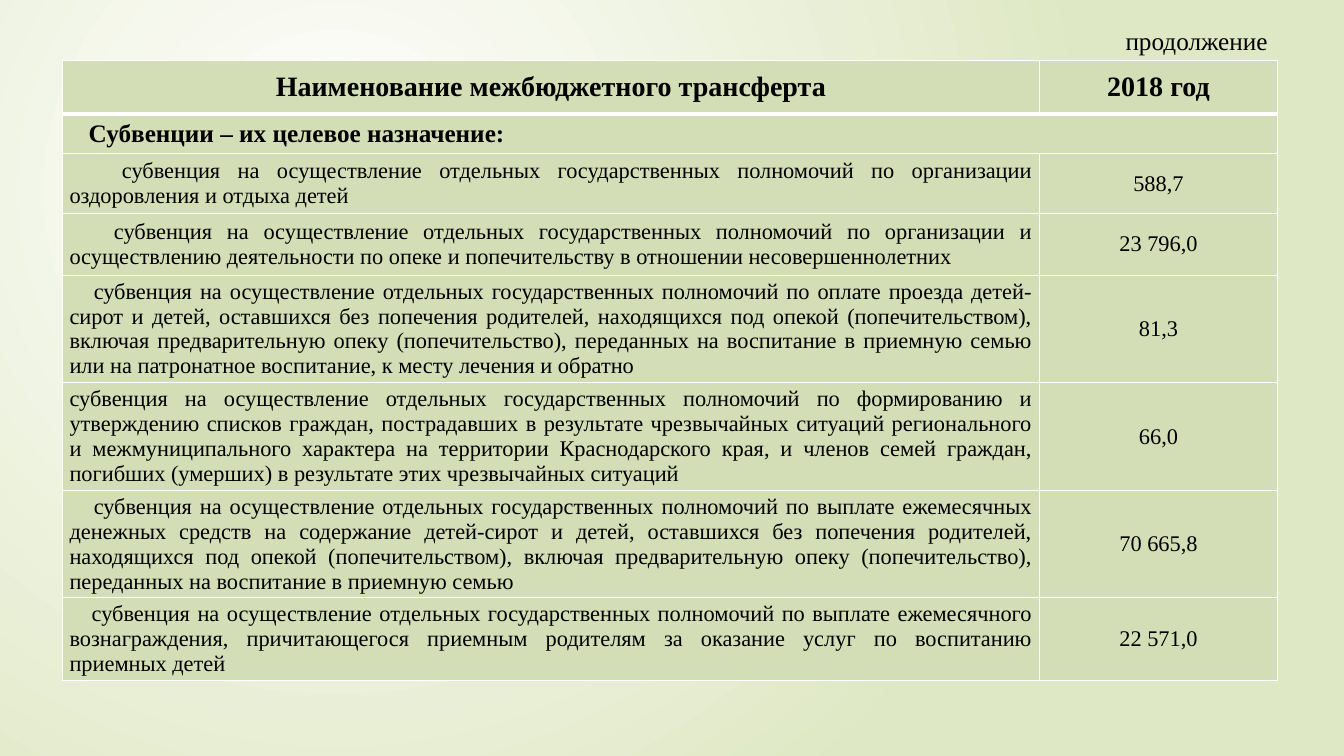
from dataclasses import dataclass

from lxml import etree
from pptx import Presentation
from pptx.dml.color import RGBColor
from pptx.enum.text import MSO_ANCHOR, PP_ALIGN
from pptx.oxml.ns import qn
from pptx.util import Inches, Pt

MIDDLE = MSO_ANCHOR.MIDDLE
CENTER, JUSTIFY, RIGHT = PP_ALIGN.CENTER, PP_ALIGN.JUSTIFY, PP_ALIGN.RIGHT
BLANK_LAYOUT = 6


@dataclass(frozen=True)
class Theme:
    """Colours, font and type sizes of the slide."""
    font: str = "Times New Roman"
    text: str = "000000"
    cell: str = "D4DEB6"
    border: str = "FFFFFF"
    glow: str = "FFFFFF"
    backdrop: str = "DFE8C4"
    header_size: int = 20
    section_size: int = 18
    body_size: int = 16
    thin: int = 1
    thick: int = 3


THEME = Theme()
HEADERS = ("Наименование межбюджетного трансферта", "2018 год")
SECTION = "Субвенции – их целевое назначение:"
SECTION_INDENT = 0.19
PURPOSE = "субвенция на осуществление отдельных государственных полномочий по "
TRANSFERS = [
    ("организации оздоровления и отдыха детей", "588,7", 0.6, 0.52),
    ("организации и осуществлению деятельности по опеке и попечительству "
     "в отношении несовершеннолетних", "23 796,0", 0.61, 0.44),
    ("оплате проезда детей-сирот и детей, оставшихся без попечения родителей, "
     "находящихся под опекой (попечительством), включая предварительную опеку "
     "(попечительство), переданных на воспитание в приемную семью или на "
     "патронатное воспитание, к месту лечения и обратно", "81,3", 1.06, 0.24),
    ("формированию и утверждению списков граждан, пострадавших в результате "
     "чрезвычайных ситуаций регионального и межмуниципального характера на "
     "территории Краснодарского края, и членов семей граждан, погибших "
     "(умерших) в результате этих чрезвычайных ситуаций", "66,0", 1.06, 0),
    ("выплате ежемесячных денежных средств на содержание детей-сирот и детей, "
     "оставшихся без попечения родителей, находящихся под опекой "
     "(попечительством), включая предварительную опеку (попечительство), "
     "переданных на воспитание в приемную семью", "70 665,8", 1.06, 0.24),
    ("выплате ежемесячного вознаграждения, причитающегося приемным родителям "
     "за оказание услуг по воспитанию приемных детей", "22 571,0", 0.81, 0.22),
]
ROW_HEIGHTS = [0.53, 0.39] + [height for _, _, height, _ in TRANSFERS]
COLUMN_WIDTHS = (9.69, 2.36)


def write_text(text_frame, text, size, alignment, bold=False, indent=0):
    """Put one formatted paragraph into a text frame."""
    text_frame.text = text
    paragraph = text_frame.paragraphs[0]
    paragraph.alignment = alignment
    if indent:
        paragraph._p.get_or_add_pPr().set("indent", str(Inches(indent)))
    font = paragraph.runs[0].font
    font.name, font.size, font.bold = THEME.font, Pt(size), bold
    font.color.rgb = RGBColor.from_string(THEME.text)


def style_cell(cell, row):
    """Give a cell its margins, borders and fill."""
    cell.vertical_anchor = MIDDLE
    cell.margin_left = cell.margin_right = Inches(0.07)
    cell.margin_top = cell.margin_bottom = Inches(0.04)
    properties = cell._tc.get_or_add_tcPr()
    widths = {
        "a:lnL": THEME.thin,
        "a:lnR": THEME.thin,
        "a:lnT": THEME.thick if row == 1 else THEME.thin,
        "a:lnB": THEME.thick if row == 0 else THEME.thin,
    }
    for tag, width in widths.items():
        line = etree.SubElement(properties, qn(tag), w=str(Pt(width)))
        fill = etree.SubElement(line, qn("a:solidFill"))
        etree.SubElement(fill, qn("a:srgbClr"), val=THEME.border)
    cell.fill.solid()
    cell.fill.fore_color.rgb = RGBColor.from_string(THEME.cell)


def paint_background(slide):
    """Fill the slide with a soft circular gradient."""
    fill = slide.background.fill
    fill.gradient()
    for stop, color in zip(fill.gradient_stops, (THEME.glow, THEME.backdrop)):
        stop.color.rgb = RGBColor.from_string(color)
    linear = next(slide.background._cSld.iter(qn("a:lin")))
    gradient = linear.getparent()
    gradient.remove(linear)
    circle = etree.SubElement(gradient, qn("a:path"), path="circle")
    etree.SubElement(circle, qn("a:fillToRect"),
                     l="50000", t="50000", r="100000", b="100000")


def add_continuation(slide, left, top, width, height):
    """Add the continuation mark above the table."""
    box = slide.shapes.add_textbox(
        Inches(left), Inches(top), Inches(width), Inches(height))
    box.text_frame.word_wrap = True
    write_text(box.text_frame, "продолжение", THEME.section_size, RIGHT)


def add_transfer_table(slide, left, top):
    """Add the table of transfers with its top left corner at the given place."""
    table = slide.shapes.add_table(
        len(ROW_HEIGHTS), len(COLUMN_WIDTHS), Inches(left), Inches(top),
        Inches(sum(COLUMN_WIDTHS)), Inches(sum(ROW_HEIGHTS))).table
    table.first_row = table.horz_banding = False
    for column, width in zip(table.columns, COLUMN_WIDTHS):
        column.width = Inches(width)
    for index, (row, height) in enumerate(zip(table.rows, ROW_HEIGHTS)):
        row.height = Inches(height)
        for cell in row.cells:
            style_cell(cell, index)
    for index, header in enumerate(HEADERS):
        write_text(table.cell(0, index).text_frame, header,
                   THEME.header_size, CENTER, bold=True)
    section = table.cell(1, 0)
    section.merge(table.cell(1, 1))
    write_text(section.text_frame, SECTION, THEME.section_size, JUSTIFY,
               bold=True, indent=SECTION_INDENT)
    for index, (purpose, amount, _, indent) in enumerate(TRANSFERS, start=2):
        write_text(table.cell(index, 0).text_frame, PURPOSE + purpose,
                   THEME.body_size, JUSTIFY, indent=indent)
        write_text(table.cell(index, 1).text_frame, amount,
                   THEME.body_size, CENTER)


def main():
    """Build the slide and save the presentation."""
    presentation = Presentation()
    presentation.slide_width = Inches(13.33)
    presentation.slide_height = Inches(7.5)
    slide = presentation.slides.add_slide(
        presentation.slide_layouts[BLANK_LAYOUT])
    paint_background(slide)
    add_transfer_table(slide, 0.62, 0.6)
    add_continuation(slide, 10.62, 0.2, 2.05, 0.4)
    presentation.save("out.pptx")


if __name__ == "__main__":
    main()
